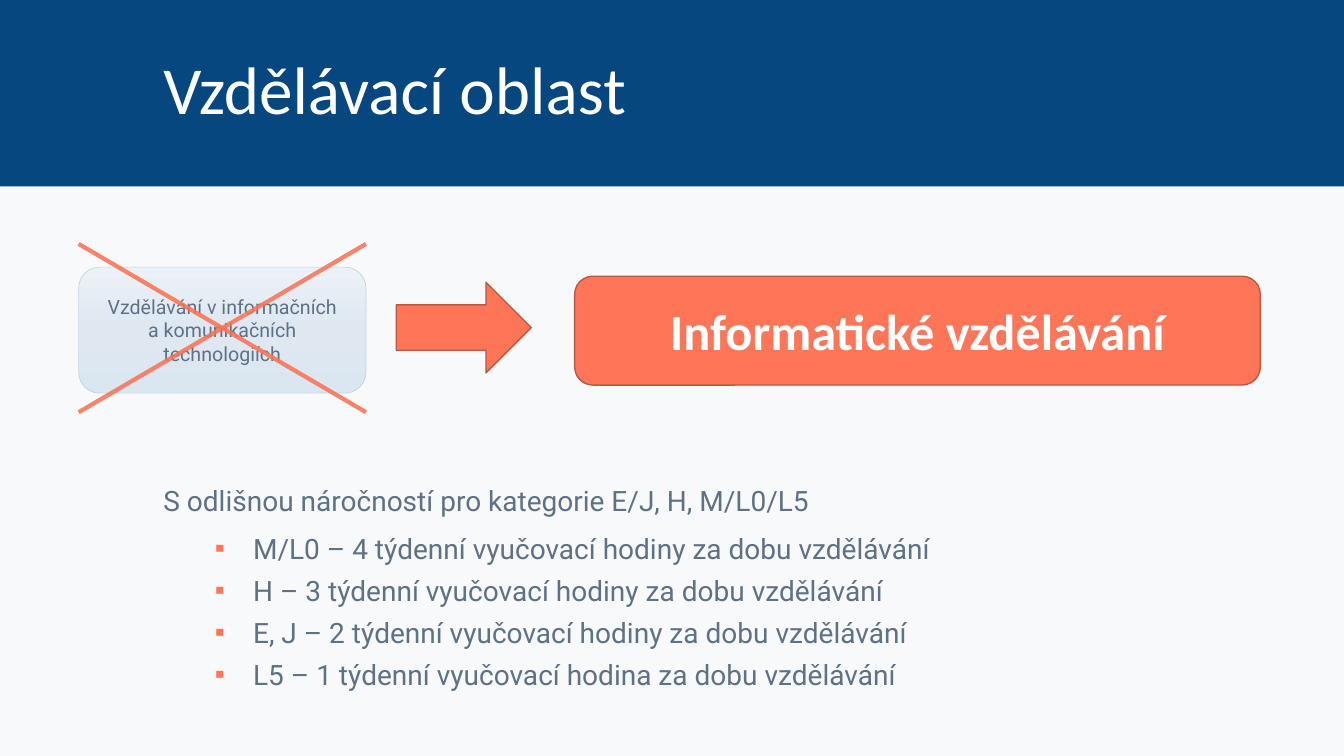
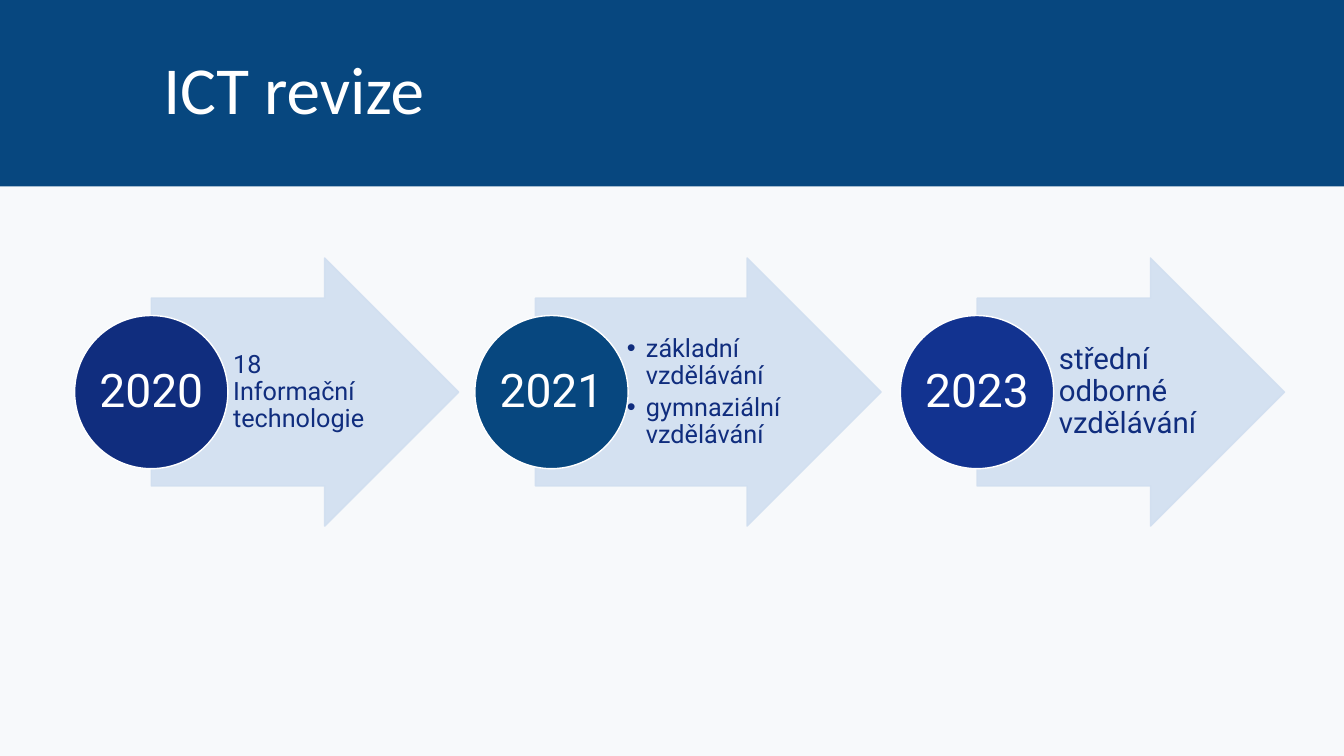
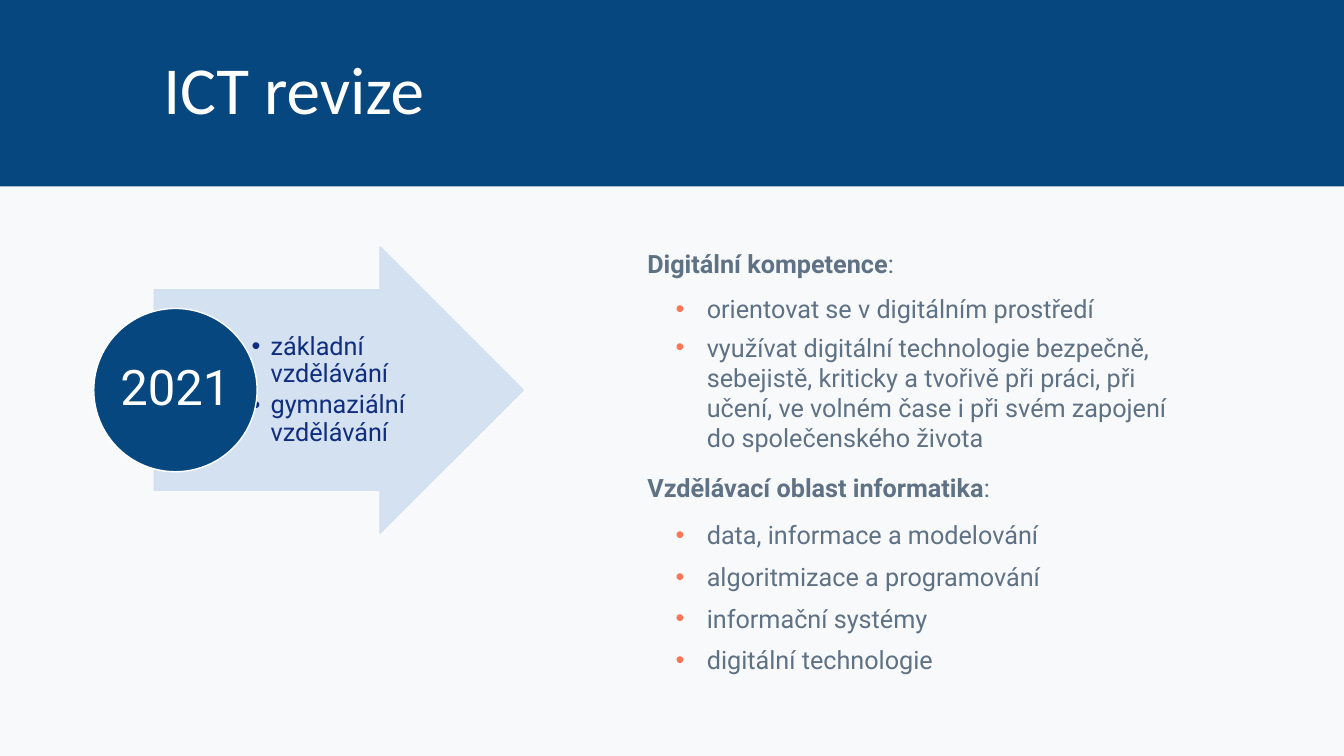
from copy import deepcopy
from dataclasses import dataclass
from typing import NamedTuple

from lxml.etree import SubElement
from pptx import Presentation
from pptx.dml.color import RGBColor
from pptx.enum.shapes import MSO_CONNECTOR, MSO_SHAPE
from pptx.enum.text import MSO_ANCHOR, MSO_AUTO_SIZE, PP_ALIGN
from pptx.oxml.ns import qn
from pptx.util import Inches, Pt


@dataclass(frozen=True)
class Theme:
    paper: str = "F7F9FB"
    band: str = "07477F"
    white: str = "FFFFFF"
    text: str = "5F7184"
    navy: str = "102D7E"
    royal: str = "123390"
    coral: str = "FF7558"
    rust: str = "BD5741"
    cross: str = "FD7052"
    pale: str = "D1DFF0"
    edge: str = "C3D5E4"
    fade: tuple = ((0, "EBF1F6"), (0.5, "DFE8F1"), (1, "DAE6F0"))
    head: str = "Calibri"
    body: str = "Roboto"
    title: int = 48
    hero: int = 36
    large: int = 20
    base: int = 18
    small: int = 14


THEME = Theme()


class Box(NamedTuple):
    left: float
    top: float
    width: float
    height: float

    def lengths(self) -> list:
        return [Inches(side) for side in self]


@dataclass(frozen=True)
class Line:
    """One paragraph of a list, led by bold words or by a bullet."""
    text: str
    lead: str = ""
    mark: str = ""
    margin: float = 0
    hang: float = 0
    space: float = 1


@dataclass(frozen=True)
class Step:
    """An arrow with its text and a disc that bears the year."""
    year: str
    lines: tuple
    arrow: Box
    disc: float
    across: float
    fill: str
    size: int = THEME.base
    big: int = 33
    mark: bool = False


def paint(run, size, color, font=THEME.body, bold=False) -> None:
    run.font.size, run.font.name, run.font.bold = Pt(size), font, bold
    run.font.color.rgb = RGBColor.from_string(color)


def fade(item, share: int) -> None:
    """Set the opacity, in percent, of each plain colour of a shape."""
    for color in item.element.spPr.iter(qn("a:srgbClr")):
        SubElement(color, qn("a:alpha")).set("val", str(share * 1000))


def bullet(para, mark: str, margin: float, hang: float, color: str) -> None:
    props = para._p.get_or_add_pPr()
    props.set("marL", str(Inches(margin)))
    props.set("indent", str(-Inches(hang)))
    tint = SubElement(props, qn("a:buClr"))
    SubElement(tint, qn("a:srgbClr")).set("val", color)
    SubElement(props, qn("a:buFont")).set("typeface", "Arial")
    SubElement(props, qn("a:buChar")).set("char", mark)


def add_form(slide, kind, box: Box, fill: str, edge: str = "", width: float = 1):
    form = slide.shapes.add_shape(kind, *box.lengths())
    form.shadow.inherit = False
    form.fill.solid()
    form.fill.fore_color.rgb = RGBColor.from_string(fill)
    if edge:
        form.line.color.rgb = RGBColor.from_string(edge)
        form.line.width = Pt(width)
    else:
        form.line.fill.background()
    return form


def label(form, text: str, size: int, color: str, font=THEME.body, bold=False) -> None:
    frame = form.text_frame
    frame.word_wrap, frame.vertical_anchor = True, MSO_ANCHOR.MIDDLE
    para = frame.paragraphs[0]
    para.text, para.alignment = text, PP_ALIGN.CENTER
    for run in para.runs:
        paint(run, size, color, font, bold)


def add_title(slide, text: str) -> None:
    frame = slide.shapes.title.text_frame
    frame.text = text
    frame.auto_size, frame.vertical_anchor = MSO_AUTO_SIZE.NONE, MSO_ANCHOR.MIDDLE
    para = frame.paragraphs[0]
    para.alignment, para.line_spacing = PP_ALIGN.LEFT, 0.9
    paint(para.runs[0], THEME.title, THEME.white, THEME.head)


def add_list(slide, box: Box, lines: list[Line], size: int) -> None:
    body = slide.placeholders[1]
    body.left, body.top, body.width, body.height = box.lengths()
    frame = body.text_frame
    frame.auto_size = MSO_AUTO_SIZE.NONE
    for index, line in enumerate(lines):
        para = frame.add_paragraph() if index else frame.paragraphs[0]
        para.text = line.lead or line.text
        if line.lead:
            para.add_run().text = line.text
        para.alignment = PP_ALIGN.LEFT
        if line.mark:
            para.line_spacing = line.space
            para.space_before, para.space_after = Pt(0), Pt(6)
            bullet(para, line.mark, line.margin, line.hang, THEME.coral)
        else:
            para.line_spacing = 0.9
            para.space_before = para.space_after = Pt(10)
        for run in para.runs:
            paint(run, size, THEME.text, bold=run.text == line.lead)


def add_step(slide, step: Step) -> None:
    left, top, width, height = step.arrow
    arrow = add_form(slide, MSO_SHAPE.RIGHT_ARROW, step.arrow, THEME.pale, THEME.pale)
    arrow.adjustments[0], arrow.adjustments[1] = 0.7, 0.5
    fade(arrow, 90)

    room = Box(left + width / 4, top + height * 0.15, width * 0.486, height * 0.7)
    frame = slide.shapes.add_textbox(*room.lengths()).text_frame
    frame.word_wrap, frame.vertical_anchor = True, MSO_ANCHOR.MIDDLE
    frame.margin_left, frame.margin_right = Inches(0.05), Inches(0.03)
    frame.margin_top = frame.margin_bottom = Inches(0.01)
    frame.text = "\n".join(step.lines)
    for para in frame.paragraphs:
        para.line_spacing = 0.9
        if step.mark:
            para.space_after = Pt(3)
            bullet(para, "•", 0.19, 0.19, THEME.navy)
        paint(para.runs[0], step.size, THEME.navy)

    across = step.across
    place = Box(step.disc, top + (height - across) / 2, across, across)
    disc = add_form(slide, MSO_SHAPE.OVAL, place, step.fill, THEME.white)
    frame = disc.text_frame
    frame.margin_left = frame.margin_right = Inches(0.02)
    frame.margin_top = frame.margin_bottom = Inches(0.02)
    label(disc, step.year, step.big, THEME.white)
    disc.text_frame.paragraphs[0].line_spacing = 0.9


def set_layout(layout, slide) -> None:
    """Put the shared ground, band and title place on the layout."""
    layout.background.fill.solid()
    layout.background.fill.fore_color.rgb = RGBColor.from_string(THEME.paper)
    band = add_form(slide, MSO_SHAPE.RECTANGLE, Box(0, 0, 13.33, 1.85), THEME.band)
    layout.shapes.element.insert(2, band.element)
    title = layout.placeholders[0]
    title.left, title.top, title.width, title.height = Box(1.52, 0.12, 10.15, 1.6).lengths()


def draw_area(slide) -> None:
    add_title(slide, "Vzdělávací oblast")
    hours = (
        "M/L0 – 4 týdenní vyučovací hodiny za dobu vzdělávání",
        "H – 3 týdenní vyučovací hodiny za dobu vzdělávání",
        "E, J – 2 týdenní vyučovací hodiny za dobu vzdělávání",
        "L5 – 1 týdenní vyučovací hodina za dobu vzdělávání",
    )
    lines = [Line("S odlišnou náročností pro kategorie E/J, H, M/L0/L5")]
    lines += [Line(text, mark="▪", margin=0.89, hang=0.38) for text in hours]
    add_list(slide, Box(1.52, 4.78, 10.06, 2.59), lines, THEME.large)

    old = add_form(slide, MSO_SHAPE.ROUNDED_RECTANGLE, Box(0.78, 2.65, 2.85, 1.25),
                   THEME.paper, THEME.edge, 0.5)
    old.fill.gradient()
    old.fill.gradient_angle = 270
    stops = old.element.spPr.find(".//" + qn("a:gsLst"))
    stops.insert(1, deepcopy(stops[0]))
    for stop, (place, color) in zip(old.fill.gradient_stops, THEME.fade):
        stop.position = place
        stop.color.rgb = RGBColor.from_string(color)
    label(old, "Vzdělávání v informačních\va komunikačních technologiích",
          THEME.small, THEME.text)

    new = add_form(slide, MSO_SHAPE.ROUNDED_RECTANGLE, Box(5.7, 2.74, 6.8, 1.08),
                   THEME.coral, THEME.rust)
    label(new, "Informatické vzdělávání", THEME.hero, THEME.white, THEME.head, True)
    add_form(slide, MSO_SHAPE.RIGHT_ARROW, Box(3.93, 2.8, 1.34, 0.9),
             THEME.coral, THEME.rust)

    for start, end in ((0.78, 3.63), (3.63, 0.78)):
        stroke = slide.shapes.add_connector(
            MSO_CONNECTOR.STRAIGHT, *Box(start, 4.09, end, 2.42).lengths())
        stroke.line.color.rgb = RGBColor.from_string(THEME.cross)
        stroke.line.width = Pt(3)
        fade(stroke, 85)
        SubElement(stroke.element.spPr, qn("a:effectLst"))


SCHOOLS = ("základní vzdělávání", "gymnaziální vzdělávání")


def draw_years(slide) -> None:
    add_title(slide, "ICT revize")
    body = slide.placeholders[1].element
    body.getparent().remove(body)
    steps = (
        Step("2020", ("18 Informační technologie",), Box(1.5, 2.56, 3.05, 2.66),
             0.74, 1.52, THEME.navy),
        Step("2021", SCHOOLS, Box(5.31, 2.56, 3.43, 2.66),
             4.71, 1.52, THEME.band, mark=True),
        Step("2023", ("střední odborné vzdělávání",), Box(9.69, 2.56, 3.05, 2.66),
             8.93, 1.52, THEME.royal, size=21),
    )
    for step in steps:
        add_step(slide, step)


def draw_skills(slide) -> None:
    add_title(slide, "ICT revize")
    skills = (
        "orientovat se v digitálním prostředí",
        "využívat digitální technologie bezpečně, sebejistě, kriticky a tvořivě "
        "při práci, při učení, ve volném čase i při svém zapojení "
        "do společenského života",
    )
    topics = (
        "data, informace a modelování",
        "algoritmizace a programování",
        "informační systémy",
        "digitální technologie",
    )
    lines = []
    for lead, texts, space in (("Digitální kompetence", skills, 1),
                               ("Vzdělávací oblast informatika", topics, 1.1)):
        lines.append(Line(":", lead))
        lines += [Line(text, mark="•", margin=0.59, hang=0.31, space=space)
                  for text in texts]
    add_list(slide, Box(6.32, 2.45, 5.6, 4.54), lines, THEME.base)
    add_step(slide, Step("2021", SCHOOLS, Box(1.53, 2.45, 3.66, 2.84),
                         0.93, 1.62, THEME.band, big=35, mark=True))


def main() -> None:
    deck = Presentation()
    deck.slide_width, deck.slide_height = Inches(13.33), Inches(7.5)
    layout = deck.slide_layouts[0]
    draws = (draw_area, draw_years, draw_skills)
    slides = [deck.slides.add_slide(layout) for _ in draws]
    set_layout(layout, slides[0])
    for draw, slide in zip(draws, slides):
        draw(slide)
    deck.save("out.pptx")


if __name__ == "__main__":
    main()
